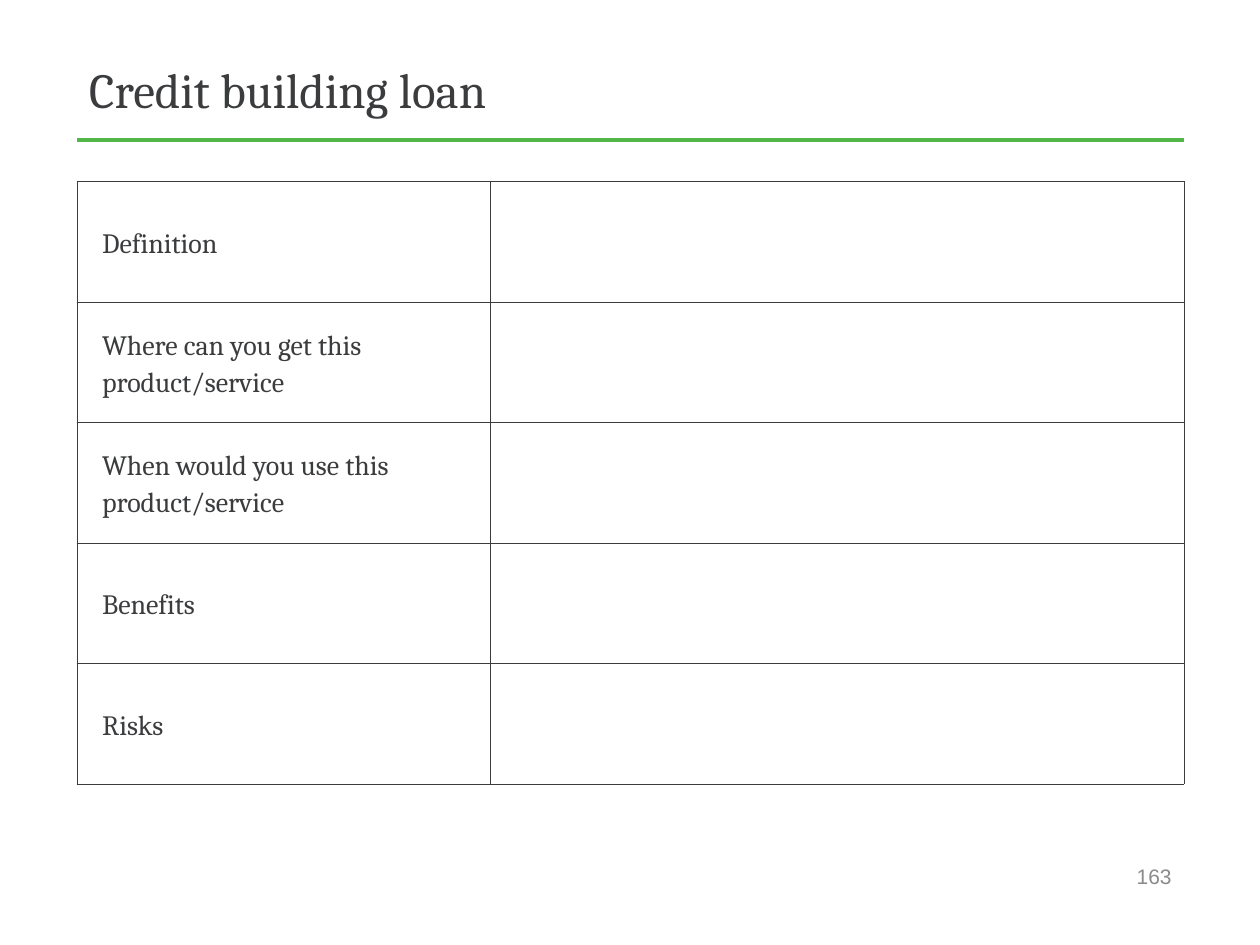
from dataclasses import dataclass
from typing import Any

from lxml.etree import SubElement
from pptx import Presentation
from pptx.dml.color import RGBColor
from pptx.enum.shapes import MSO_CONNECTOR
from pptx.enum.text import MSO_ANCHOR, PP_ALIGN
from pptx.oxml.ns import qn
from pptx.util import Cm, Pt

LEFT, WIDTH = 1.55, 22.32
ROWS = [
    "Definition",
    "Where can you get this product/service",
    "When would you use this product/service",
    "Benefits",
    "Risks",
]


def rgb(value):
    return RGBColor.from_string(value)


@dataclass
class Builder:
    """Style and current slide, with one method per kind of element."""
    s: Any
    font: str = "Cambria"
    ink: str = "3B3C3E"
    accent: str = "50B748"
    border: str = "3A3C3E"

    def format(self, p, size, color=None, font=None):
        for r in p.runs:
            r.font.size = Pt(size)
            r.font.name = font or self.font
            r.font.color.rgb = rgb(color or self.ink)

    def text(self, box, text, size, color=None, font=None, align=PP_ALIGN.LEFT):
        tf = self.s.shapes.add_textbox(*map(Cm, box)).text_frame
        tf.word_wrap = True
        tf.vertical_anchor = MSO_ANCHOR.MIDDLE
        tf.text = text
        p = tf.paragraphs[0]
        p.alignment = align
        self.format(p, size, color, font)

    def rule(self, x, y, width):
        line = self.s.shapes.add_connector(
            MSO_CONNECTOR.STRAIGHT, Cm(x), Cm(y), Cm(x + width), Cm(y))
        line.line.color.rgb = rgb(self.accent)
        line.line.width = Pt(2)
        SubElement(line._element.spPr, qn("a:effectLst"))

    def outline(self, cell):
        """Draw a thin border on all four sides of a cell."""
        tcPr = cell._tc.get_or_add_tcPr()
        for side in ("lnL", "lnR", "lnT", "lnB"):
            ln = SubElement(tcPr, qn(f"a:{side}"), w=str(Pt(0.25)))
            fill = SubElement(ln, qn("a:solidFill"))
            SubElement(fill, qn("a:srgbClr"), val=self.border)

    def table(self, box, labels, col_widths):
        table = self.s.shapes.add_table(
            len(labels), len(col_widths), *map(Cm, box)).table
        table.first_row = table.horz_banding = False
        for col, width in zip(table.columns, col_widths):
            col.width = Cm(width)
        for cell in table.iter_cells():
            self.outline(cell)
            cell.fill.background()
        for i, label in enumerate(labels):
            cell = table.cell(i, 0)
            cell.margin_left = Cm(0.51)
            cell.vertical_anchor = MSO_ANCHOR.MIDDLE
            cell.text = label
            p = cell.text_frame.paragraphs[0]
            p.line_spacing = 1.15
            self.format(p, 16)


def main():
    prs = Presentation()
    prs.slide_width, prs.slide_height = Cm(25.4), Cm(19.05)
    b = Builder(prs.slides.add_slide(prs.slide_layouts[6]))
    b.rule(LEFT, 2.82, WIDTH)
    b.text((LEFT, 0.76, WIDTH, 2.06), "Credit building loan", 28)
    b.text((15.82, 17.15, 8.05, 1.02), "163", 12, "8A8B8C", "Arial", PP_ALIGN.RIGHT)
    b.table((LEFT, 3.66, WIDTH, 12.14), ROWS, (8.33, 13.99))
    prs.save("out.pptx")


if __name__ == "__main__":
    main()
